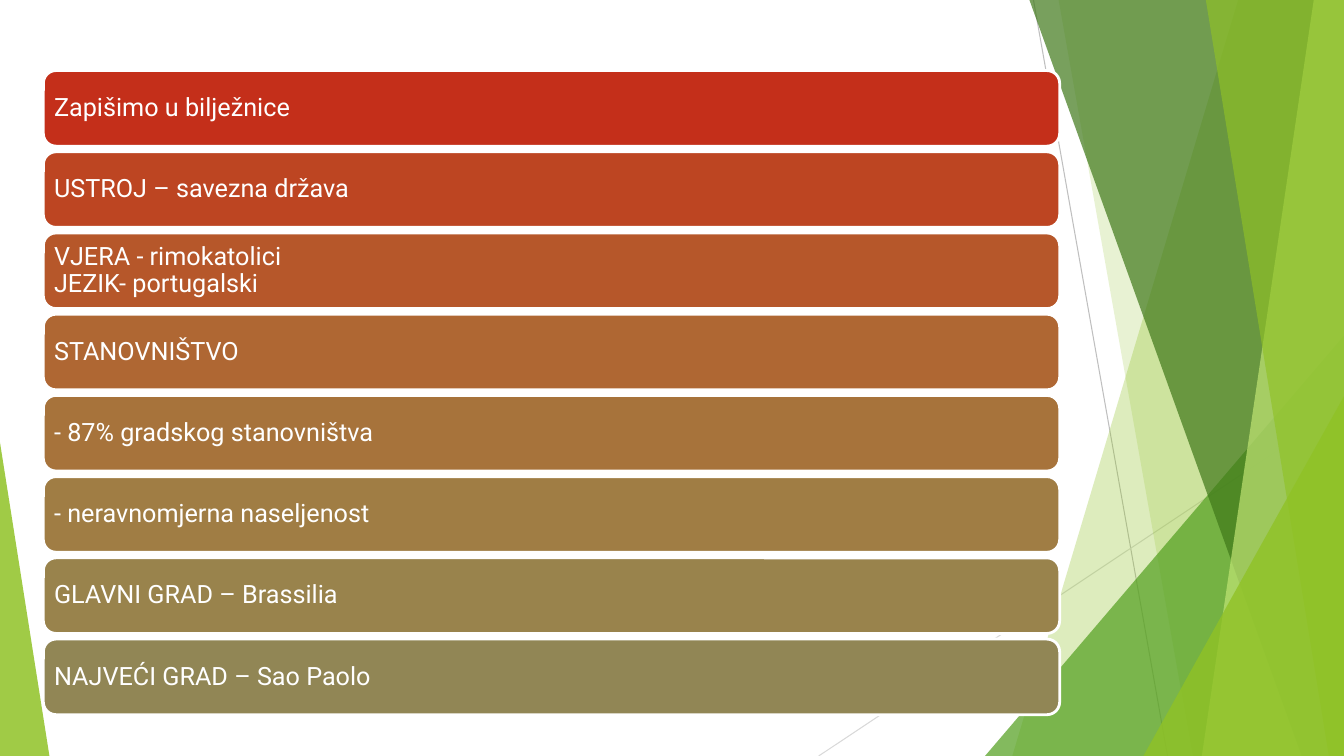
from lxml.etree import SubElement
from pptx import Presentation
from pptx.dml.color import RGBColor
from pptx.enum.shapes import MSO_CONNECTOR, MSO_SHAPE
from pptx.enum.text import MSO_ANCHOR, PP_ALIGN
from pptx.oxml.ns import qn
from pptx.util import Inches, Pt

WIDTH, HEIGHT = 13.33, 7.5
WHITE = RGBColor(0xFF, 0xFF, 0xFF)
GREEN = RGBColor(0x90, 0xC2, 0x26)
MID_GREEN = RGBColor(0x54, 0xA0, 0x21)
DARK_GREEN = RGBColor(0x3F, 0x78, 0x19)
PALE_GREEN = RGBColor(0xC0, 0xE4, 0x74)
GREY = RGBColor(0xBF, 0xBF, 0xBF)
LIGHT_GREY = RGBColor(0xD9, 0xD9, 0xD9)

# A vertical tab breaks the line inside a paragraph.
NOTES = [
    ("Zapišimo u bilježnice\u00a0", RGBColor(0xC4, 0x2F, 0x1A)),
    ("USTROJ – savezna država", RGBColor(0xBD, 0x45, 0x22)),
    ("VJERA - rimokatolici\vJEZIK- portugalski\u00a0", RGBColor(0xB6, 0x57, 0x2A)),
    ("STANOVNIŠTVO", RGBColor(0xAF, 0x67, 0x33)),
    ("- 87% gradskog stanovništva", RGBColor(0xA7, 0x73, 0x3B)),
    ("- neravnomjerna naseljenost", RGBColor(0xA0, 0x7D, 0x44)),
    ("GLAVNI GRAD – Brassilia", RGBColor(0x99, 0x83, 0x4C)),
    ("NAJVEĆI GRAD – Sao Paolo", RGBColor(0x91, 0x86, 0x55)),
]
BAR_LEFT, BAR_TOP, BAR_WIDTH, BAR_HEIGHT = 0.43, 0.7, 10.08, 0.75
BAR_PITCH = 5.64 / (len(NOTES) - 1)

# Start and end of each thin line, and its colour
RAYS = [
    ((10.25, 0), (11.58, HEIGHT), GREY),
    ((WIDTH, 4.03), (8.12, HEIGHT), LIGHT_GREY),
]

# Facets reach the right edge: (x at top, x at bottom, colour, opacity %).
# Triangles stand on the bottom edge: (left, width, height, apex, colour, opacity %).
FACETS = [
    (12.28, 10.04, GREEN, 30),
    (10.5, 11.83, GREEN, 20),
    (9.77, 3.56, 4.17, 1, MID_GREEN, 72),
    (10.21, 12.91, DARK_GREEN, 70),
    (13.03, 11.92, PALE_GREEN, 70),
    (11.96, 13.18, GREEN, 65),
    (11.34, 1.99, 3.57, 1, GREEN, 80),
    (0, 0.49, 3.11, 0, GREEN, 85),
]


def paint(shape, colour, opacity=100):
    shape.shadow.inherit = False
    shape.fill.solid()
    shape.fill.fore_color.rgb = colour
    shape.line.fill.background()
    if opacity < 100:
        tint = shape._element.spPr.find(qn("a:solidFill"))[0]
        SubElement(tint, qn("a:alpha"), val=str(opacity * 1000))


def add_ray(shapes, start, end, colour):
    ray = shapes.add_connector(MSO_CONNECTOR.STRAIGHT, *map(Inches, start + end))
    ray.line.color.rgb = colour
    ray.line.width = Pt(0.75)
    SubElement(ray._element.spPr, qn("a:effectLst"))


def add_facet(shapes, top_x, bottom_x, colour, opacity):
    outline = shapes.build_freeform(Inches(top_x), 0)
    corners = [(WIDTH, 0), (WIDTH, HEIGHT), (bottom_x, HEIGHT)]
    outline.add_line_segments([(Inches(x), Inches(y)) for x, y in corners])
    paint(outline.convert_to_shape(), colour, opacity)


def add_triangle(shapes, left, width, height, apex, colour, opacity):
    box = map(Inches, (left, HEIGHT - height, width, height))
    triangle = shapes.add_shape(MSO_SHAPE.ISOSCELES_TRIANGLE, *box)
    triangle.adjustments[0] = apex
    paint(triangle, colour, opacity)


def add_note(shapes, row, text, colour):
    box = map(Inches, (BAR_LEFT, BAR_TOP + row * BAR_PITCH, BAR_WIDTH, BAR_HEIGHT))
    bar = shapes.add_shape(MSO_SHAPE.ROUNDED_RECTANGLE, *box)
    paint(bar, colour)
    bar.line.color.rgb = WHITE
    bar.line.width = Pt(2)
    frame = bar.text_frame
    frame.word_wrap = True
    frame.vertical_anchor = MSO_ANCHOR.MIDDLE
    # The rounded corners add about 0.04 inches of their own.
    frame.margin_left = frame.margin_right = Inches(0.07)
    frame.margin_top = frame.margin_bottom = Inches(0.07)
    frame.text = text
    paragraph = frame.paragraphs[0]
    paragraph.alignment = PP_ALIGN.LEFT
    paragraph.line_spacing = 0.9
    for run in paragraph.runs:
        run.font.name = "Roboto"
        run.font.size = Pt(18)
        run.font.color.rgb = WHITE


def main():
    deck = Presentation()
    deck.slide_width, deck.slide_height = Inches(WIDTH), Inches(HEIGHT)
    shapes = deck.slides.add_slide(deck.slide_layouts[6]).shapes
    for ray in RAYS:
        add_ray(shapes, *ray)
    for facet in FACETS:
        add = add_facet if len(facet) == 4 else add_triangle
        add(shapes, *facet)
    for row, (text, colour) in enumerate(NOTES):
        add_note(shapes, row, text, colour)
    deck.save("out.pptx")


if __name__ == "__main__":
    main()
